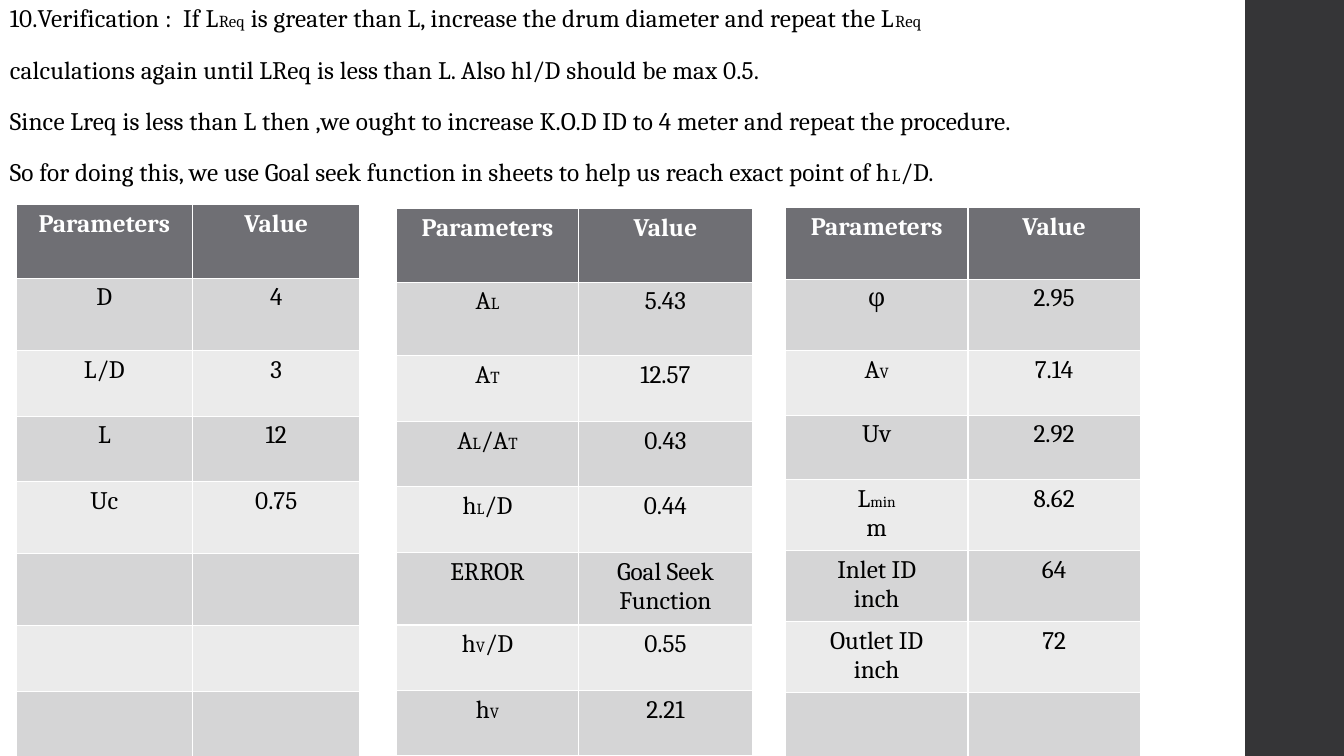
"""Builds the knock-out drum verification slide with its three parameter tables."""
from pptx import Presentation
from pptx.dml.color import RGBColor
from pptx.enum.shapes import MSO_SHAPE
from pptx.enum.text import PP_ALIGN
from pptx.util import Inches, Pt

COLORS = {"sidebar": "353537", "header": "6F6F74", "dark_row": "D5D5D6",
          "light_row": "EBEBEB", "text": "000000", "header_text": "FFFFFF"}
HEADINGS = ("Parameters", "Value")


def color(name):
    return RGBColor.from_string(COLORS[name])


def write(paragraph, text, tone="text", bold=False, spacing=0):
    """Write text whose small letters stand between _ marks (12 pt) or ^ marks (11 pt)."""
    paragraph.font.name = "Cambria"
    paragraph.font.size = Pt(18)
    paragraph.font.bold = bold
    paragraph.font.color.rgb = color(tone)
    small = Pt(11 if "^" in text else 12)
    for order, part in enumerate(text.replace("^", "_").split("_")):
        if part:
            run = paragraph.add_run()
            run.text = part
            if order % 2:
                run.font.size = small
            if spacing:
                run.font._element.set("spc", str(spacing))


deck = Presentation()
deck.slide_width, deck.slide_height = Inches(13.33), Inches(7.5)
slide = deck.slides.add_slide(deck.slide_layouts[6])

sidebar = slide.shapes.add_shape(MSO_SHAPE.RECTANGLE, Inches(12.35), 0,
                                 Inches(0.98), deck.slide_height)
sidebar.shadow.inherit = False
sidebar.fill.solid()
sidebar.fill.fore_color.rgb = color("sidebar")
sidebar.line.fill.background()

steps = [
    "10.Verification :  If L_Req_ is greater than L, increase the drum diameter and repeat the L_Req_",
    "calculations again until LReq is less than L. Also hl/D should be max 0.5.",
    "Since Lreq is less than L then ,we ought to increase K.O.D ID to 4 meter and repeat the procedure.",
    "So for doing this, we use Goal seek function in sheets to help us reach exact point of h_L_/D.",
]
verification = slide.shapes.add_textbox(0, 0, Inches(12.35), Inches(2)).text_frame
verification.word_wrap = True
for index, step in enumerate(steps):
    line = verification.add_paragraph() if index else verification.paragraphs[0]
    line.line_spacing = 0.95
    line.space_before = Pt(14 if index else 0)
    line.space_after = Pt(2)
    write(line, step, spacing=10)

parameter_sets = [
    (0.16, 2.03, (1.75, 1.66), (0.73, 0.72, 0.65, 0.65, 0.71, 0.72, 0.65, 0.65),
     [("D", "4"), ("L/D", "3"), ("L", "12"), ("Uc", "0.75"),
      ("", ""), ("", ""), ("", "")]),
    (3.93, 2.07, (1.81, 1.72), (0.73, 0.73, 0.65, 0.65, 0.65, 0.72, 0.65, 0.65),
     [("A_L_", "5.43"), ("A_T_", "12.57"), ("A_L_/A_T_", "0.43"), ("h^L^/D", "0.44"),
      ("ERROR", "Goal Seek\nFunction"), ("h^V^/D", "0.55"), ("h^V^", "2.21")]),
    (7.79, 2.06, (1.81, 1.71), (0.71, 0.71, 0.64, 0.64, 0.68, 0.71, 0.68, 0.64),
     [("φ", "2.95"), ("A^V^", "7.14"), ("Uv", "2.92"), ("L^min^\nm", "8.62"),
      ("Inlet ID\ninch", "64"), ("Outlet ID\ninch", "72"), ("", "")]),
]
for left, top, widths, heights, values in parameter_sets:
    parameters = slide.shapes.add_table(
        len(heights), len(widths), Inches(left), Inches(top),
        Inches(sum(widths)), Inches(sum(heights))).table
    for column, width in zip(parameters.columns, widths):
        column.width = Inches(width)
    for r, (height, entries) in enumerate(zip(heights, [HEADINGS, *values])):
        parameters.rows[r].height = Inches(height)
        band = "header" if r == 0 else "dark_row" if r % 2 else "light_row"
        tone = "text" if r else "header_text"
        for c, entry in enumerate(entries):
            cell = parameters.cell(r, c)
            cell.fill.solid()
            cell.fill.fore_color.rgb = color(band)
            for index, text in enumerate(entry.split("\n")):
                frame = cell.text_frame
                line = frame.add_paragraph() if index else frame.paragraphs[0]
                line.alignment = PP_ALIGN.CENTER
                write(line, text, tone, bold=r == 0)

deck.save("out.pptx")
